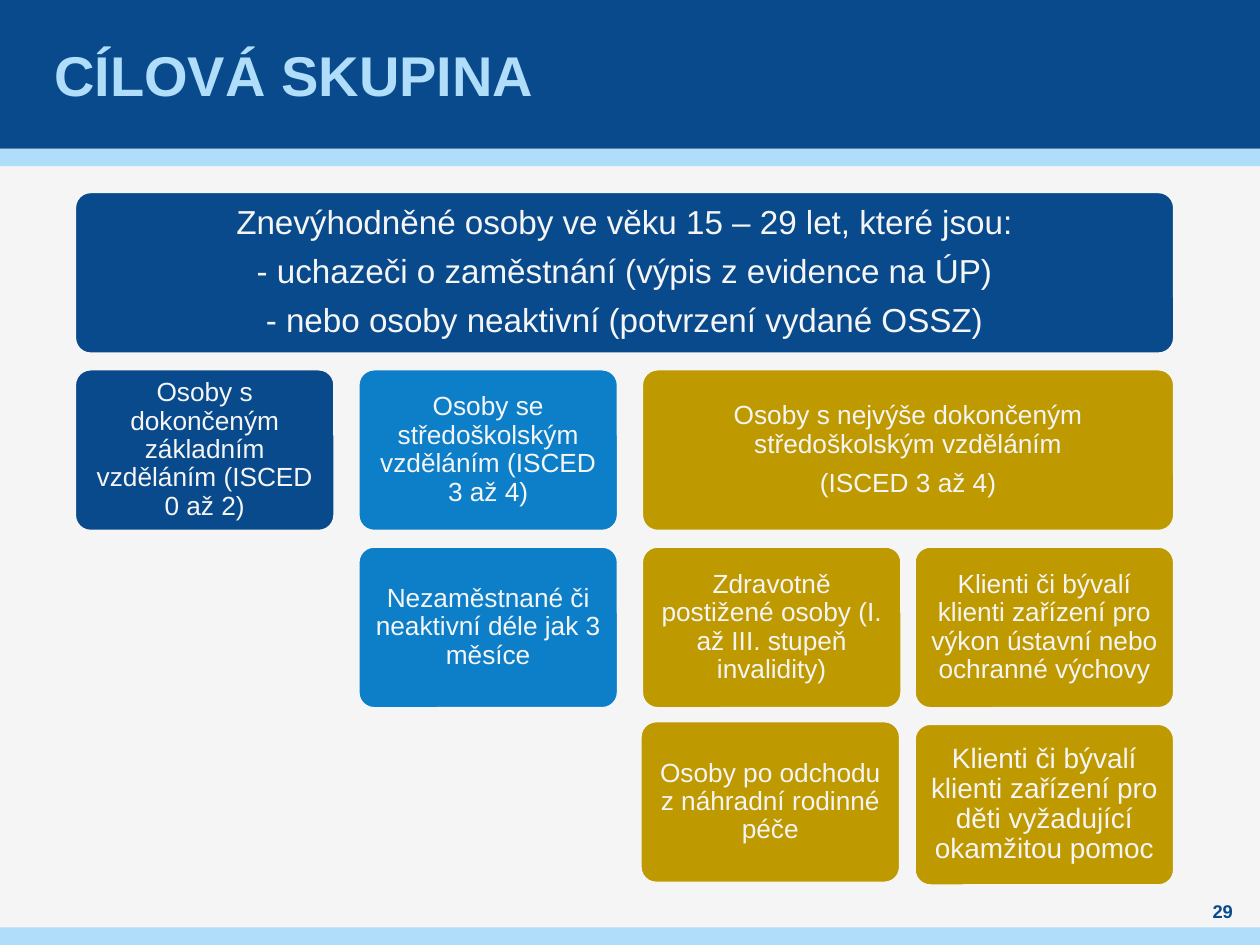
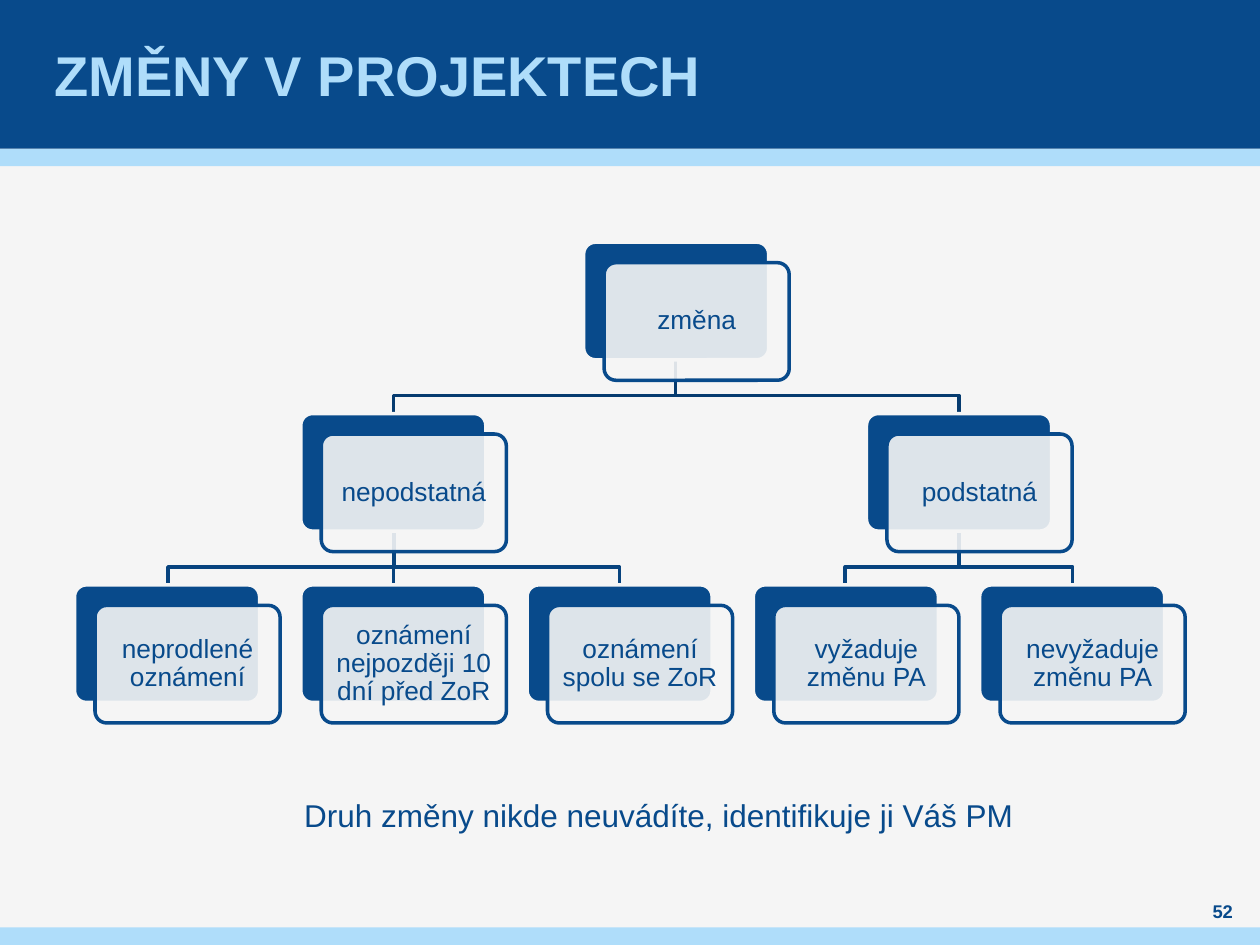
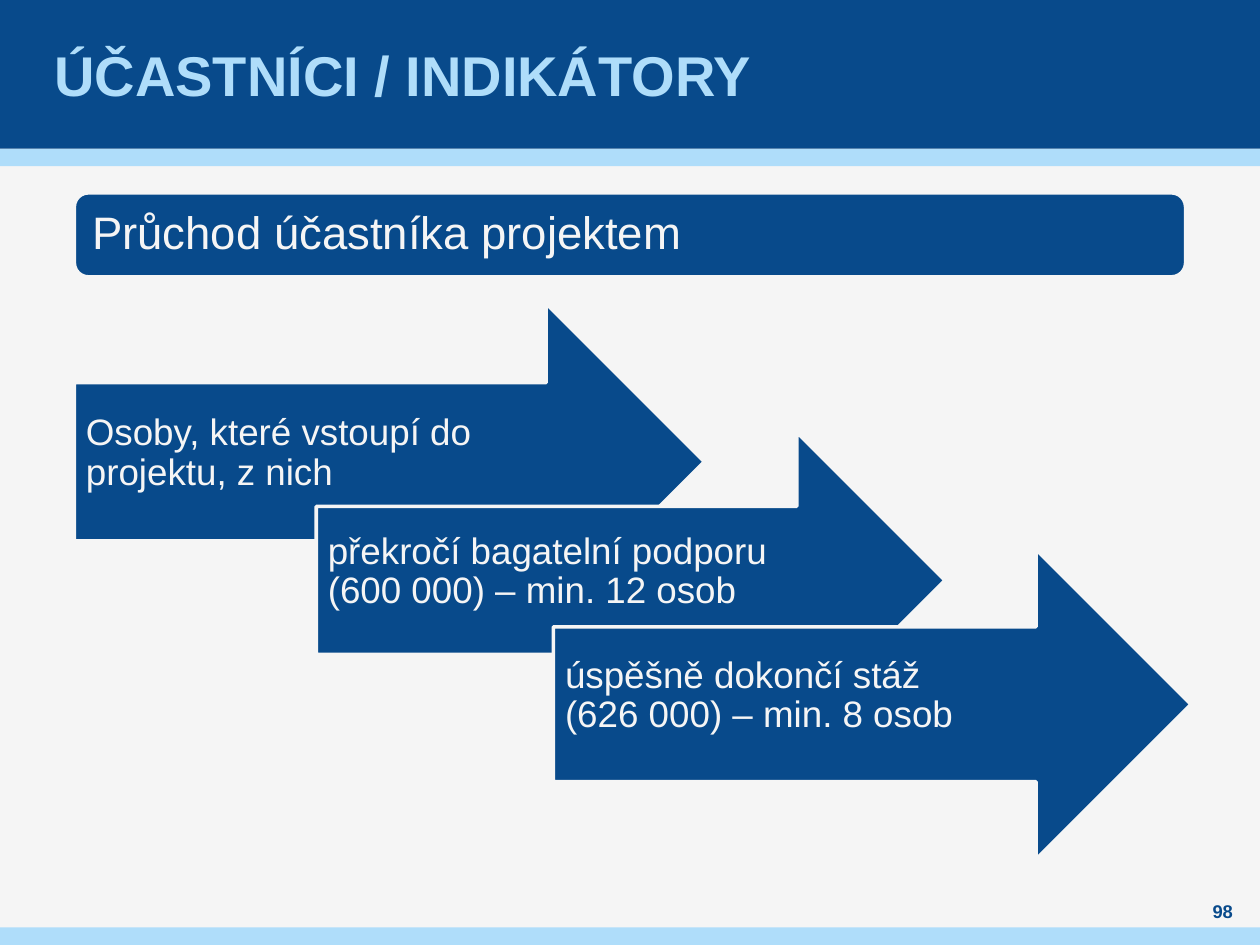
from lxml.etree import SubElement
from pptx import Presentation
from pptx.dml.color import RGBColor
from pptx.enum.shapes import MSO_CONNECTOR, MSO_SHAPE
from pptx.enum.text import MSO_ANCHOR, MSO_AUTO_SIZE, PP_ALIGN
from pptx.oxml.ns import qn
from pptx.util import Pt

COLORS = {
    "navy": "084A8B", "sky": "AFDDFA", "blue": "0D7FC8", "gold": "BF9900",
    "paper": "F5F5F5", "root_line": "063B6F", "branch_line": "07437E",
}
COLORS = {name: RGBColor.from_string(value) for name, value in COLORS.items()}


def write(sp, text, size=15, color="paper", bold=False, align=PP_ALIGN.CENTER,
          insets=(4.5, 4.5, 4.5, 4.5), spacing=0.9, after=0.4):
    """Fill a shape with text, one paragraph per line."""
    tf = sp.text_frame
    tf.word_wrap = True
    tf.auto_size = MSO_AUTO_SIZE.NONE
    tf.vertical_anchor = MSO_ANCHOR.MIDDLE
    tf.margin_left, tf.margin_top, tf.margin_right, tf.margin_bottom = map(Pt, insets)
    tf.text = text
    for p in tf.paragraphs:
        p.alignment = align
        p.line_spacing = spacing
        p.space_after = Pt(round(size * after, 1))
        for r in p.runs:
            r.font.name = "Arial"
            r.font.size = Pt(size)
            r.font.bold = bold
            r.font.color.rgb = COLORS[color]


def add_box(s, kind, left, top, width, height, fill="navy", line="paper", radius=None):
    """Add a flat preset shape with a solid fill and an optional outline."""
    sp = s.shapes.add_shape(kind, Pt(left), Pt(top), Pt(width), Pt(height))
    sp.shadow.inherit = False
    sp.fill.solid()
    sp.fill.fore_color.rgb = COLORS[fill]
    if line:
        sp.line.color.rgb = COLORS[line]
        sp.line.width = Pt(2)
    else:
        sp.line.fill.background()
    if radius is not None:
        sp.adjustments[0] = radius
    return sp


prs = Presentation()
prs.slide_width, prs.slide_height = Pt(720), Pt(540)

# Shared background and title place
fill = prs.slide_master.background.fill
fill.solid()
fill.fore_color.rgb = COLORS["paper"]
layout = prs.slide_layouts[5]
title = layout.placeholders[0]
title.left, title.top, title.width, title.height = Pt(28), Pt(0), Pt(663), Pt(85)

# Slides with title and page number
slides = []
for heading, number in (("CÍLOVÁ SKUPINA", "29"), ("ZMĚNY V PROJEKTECH", "52"),
                        ("ÚČASTNÍCI / INDIKÁTORY", "98")):
    s = prs.slides.add_slide(layout)
    write(s.shapes.title, heading, size=32, color="sky", bold=True,
          align=PP_ALIGN.LEFT, insets=(3, 0, 3, 0), spacing=1, after=0)
    sp = s.shapes.add_textbox(Pt(680.5), Pt(513.2), Pt(36.5), Pt(14.5))
    write(sp, number, size=10.5, color="navy", bold=True,
          insets=(0, 0, 0, 0), spacing=1, after=0)
    slides.append(s)
target_slide, change_slide, flow_slide = slides

# Bands, moved to the layout
bands = ((85, 10, "sky"), (0, 85, "navy"), (530, 10, "sky"))
for i, (top, height, color) in enumerate(bands):
    sp = add_box(target_slide, MSO_SHAPE.RECTANGLE, 0, top, 720, height, color, None)
    sp.element.xpath(".//p:cNvPr")[0].set("id", str(20 + i))
    layout.shapes._spTree.insert(2 + i, sp.element)

# Target group: cards by column and row
COL = (42.5, 204.5, 366.5, 522.3)
ROW = [109.4 + 101.3 * i for i in range(4)]
CARD_W, CARD_H = 149, 93
WIDE = COL[3] + CARD_W - COL[2]
FULL = COL[3] + CARD_W - COL[0]
cards = (
    (COL[0], ROW[0], FULL, "navy", 19,
     "Znevýhodněné osoby ve věku 15 – 29 let, které jsou:\n"
     "- uchazeči o zaměstnání (výpis z evidence na ÚP)\n"
     "- nebo osoby neaktivní (potvrzení vydané OSSZ)"),
    (COL[0], ROW[1], CARD_W, "navy", 15,
     "Osoby s dokončeným základním vzděláním (ISCED 0 až 2)"),
    (COL[1], ROW[1], CARD_W, "blue", 15,
     "Osoby se středoškolským vzděláním (ISCED 3 až 4)"),
    (COL[1], ROW[2], CARD_W, "blue", 15, "Nezaměstnané či neaktivní déle jak 3 měsíce"),
    (COL[2], ROW[1], WIDE, "gold", 15,
     "Osoby s nejvýše dokončeným středoškolským vzděláním\n(ISCED 3 až 4)"),
    (COL[2], ROW[2], CARD_W, "gold", 15,
     "Zdravotně postižené osoby (I. až III. stupeň invalidity)"),
    (COL[2] - 0.8, ROW[3] - 1.5, CARD_W, "gold", 15,
     "Osoby po odchodu z náhradní rodinné péče"),
    (COL[3], ROW[2], CARD_W, "gold", 15,
     "Klienti či bývalí klienti zařízení pro výkon ústavní nebo ochranné výchovy"),
    (COL[3], ROW[3], CARD_W, "gold", 16,
     "Klienti či bývalí klienti zařízení pro děti vyžadující okamžitou pomoc"),
)
for left, top, width, color, size, text in cards:
    sp = add_box(target_slide, MSO_SHAPE.ROUNDED_RECTANGLE, left, top, width, CARD_H,
                 color, radius=0.1)
    write(sp, text, size=size)

# Changes: tree nodes as (column, level, parent, text)
NODE_W, NODE_H, OFFSET = 105.8, 67.2, 11.7
nodes = (
    (2.25, 0, None, "změna"),
    (1, 1, 0, "nepodstatná"),
    (3.5, 1, 0, "podstatná"),
    (0, 2, 1, "neprodlené oznámení"),
    (1, 2, 1, "oznámení nejpozději 10 dní před ZoR"),
    (2, 2, 1, "oznámení spolu se ZoR"),
    (3, 2, 2, "vyžaduje změnu PA"),
    (4, 2, 2, "nevyžaduje změnu PA"),
)
s = change_slide
backs = []
for column, level, parent, text in nodes:
    left, top = 42.6 + 129.3 * column, 138.4 + 97.9 * level
    back = add_box(s, MSO_SHAPE.ROUNDED_RECTANGLE, left, top, NODE_W, NODE_H, radius=0.1)
    backs.append(back)
    sp = add_box(s, MSO_SHAPE.ROUNDED_RECTANGLE, left + OFFSET, top + OFFSET,
                 NODE_W, NODE_H, "paper", "navy", 0.1)
    alpha = SubElement(sp.element.spPr.find(".//" + qn("a:srgbClr")), qn("a:alpha"))
    alpha.set("val", "90000")
    write(sp, text, color="navy")

# Branches of the tree, behind the nodes
for (column, level, parent, text), back in zip(nodes, backs):
    if parent is None:
        continue
    above = backs[parent]
    x1, y1 = (above.left + above.width / 2) / Pt(1), (above.top + above.height) / Pt(1)
    x2, y2 = (back.left + back.width / 2) / Pt(1), back.top / Pt(1)
    if column == nodes[parent][0]:
        line = s.shapes.add_connector(MSO_CONNECTOR.STRAIGHT, Pt(x1), Pt(y1), Pt(x2), Pt(y2))
        line.begin_connect(above, 2)
        line.end_connect(back, 0)
    else:
        bend = y1 + 0.68 * (y2 - y1)
        outline = s.shapes.build_freeform(x1, y1, scale=Pt(1))
        outline.add_line_segments([(x1, bend), (x2, bend), (x2, y2)], close=False)
        line = outline.convert_to_shape()
        line.fill.background()
    line.line.color.rgb = COLORS["root_line" if level == 1 else "branch_line"]
    line.line.width = Pt(2)
    SubElement(line._element.spPr, qn("a:effectLst"))
    s.shapes._spTree.insert(2, line._element)

# Remark under the tree
sp = s.shapes.add_textbox(Pt(166.7), Pt(451.4), Pt(465), Pt(29))
write(sp, "Druh změny nikde neuvádíte, identifikuje ji Váš PM", size=18, color="navy",
      align=PP_ALIGN.LEFT, insets=(7.2, 3.6, 7.2, 3.6), spacing=1, after=0)

# Participants: heading and overlapping arrows
sp = add_box(flow_slide, MSO_SHAPE.ROUNDED_RECTANGLE, 42.5, 110.2, 635, 48)
write(sp, "Průchod účastníka projektem", size=26, align=PP_ALIGN.LEFT,
      insets=(7.8, 7.8, 7.8, 7.8))
arrows = (
    (42.5, 173.5, 360, 180.7, "Osoby, které vstoupí do projektu, z nich"),
    (180.7, 247, 359.3, 169.2, "překročí bagatelní podporu (600 000) – min. 12 osob"),
    (316.3, 313.9, 364.3, 177.1, "úspěšně dokončí stáž\v(626 000) – min. 8 osob"),
)
for left, top, width, height, text in arrows:
    sp = add_box(flow_slide, MSO_SHAPE.RIGHT_ARROW, left, top, width, height)
    write(sp, text, size=21, align=PP_ALIGN.LEFT, insets=(6.6, 6.6, 20, 16))

prs.save("out.pptx")
